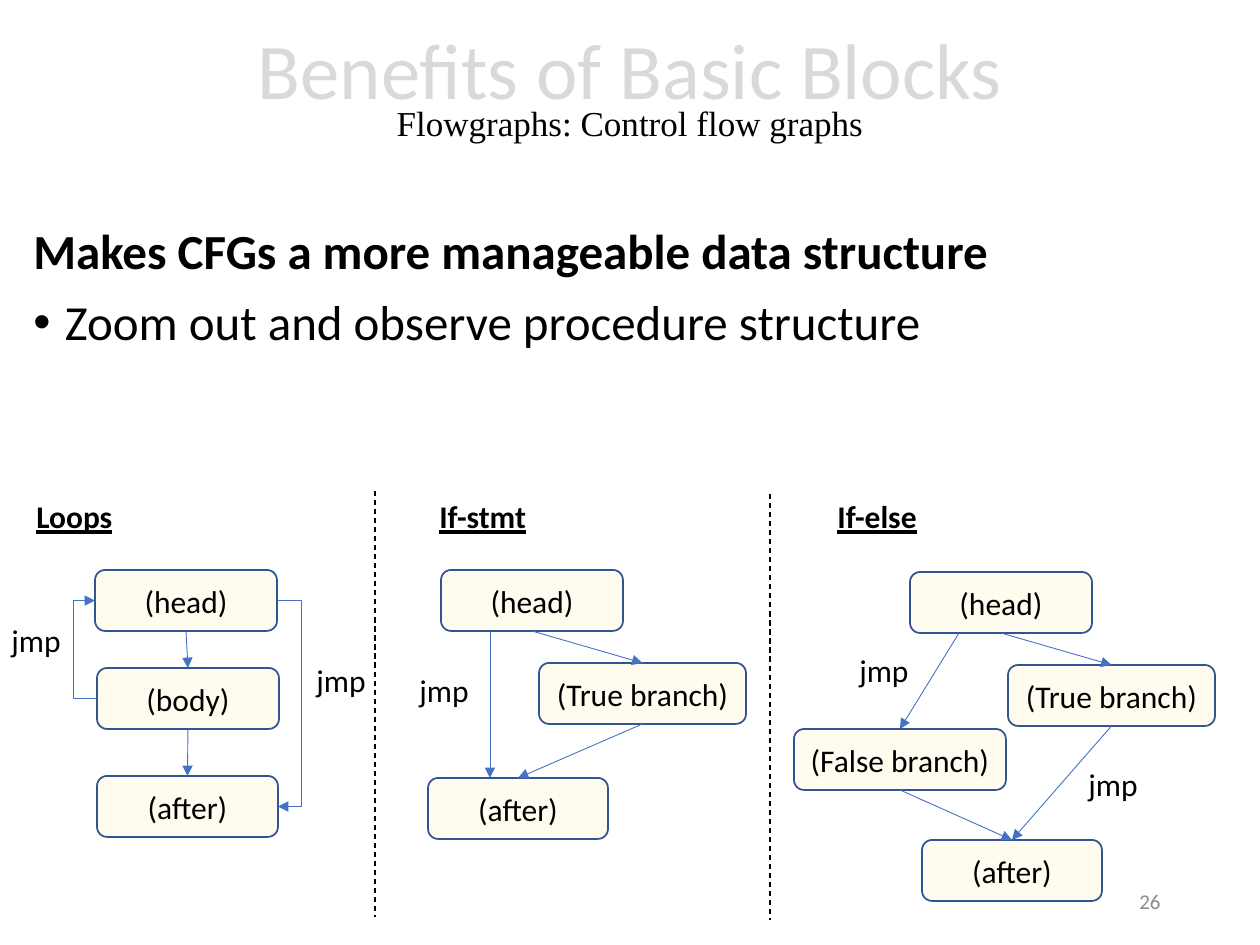
from lxml.etree import SubElement
from pptx import Presentation
from pptx.dml.color import RGBColor
from pptx.enum.dml import MSO_LINE
from pptx.enum.shapes import MSO_CONNECTOR as CONN, MSO_SHAPE as SHAPE
from pptx.enum.text import MSO_ANCHOR as ANCHOR, PP_ALIGN as ALIGN
from pptx.oxml.ns import qn
from pptx.util import Pt

SCALE = 914400 / 126  # EMU per px
BLUE, BORDER, CREAM = "4472C4", "325491", "FFF2CC"
TOP, LEFT, BOTTOM, RIGHT = range(4)  # connection sites of a box
BOX_H = 61


def px(n):
    return round(n * SCALE)


def color(hex_text):
    return RGBColor.from_string(hex_text)


def add_run(p, text, size=18, font="Calibri", fill="000000", bold=False, underline=False):
    r = p.add_run()
    r.text = text
    r.font.size, r.font.name = Pt(size), font
    r.font.bold, r.font.underline = bold, underline
    r.font.color.rgb = color(fill)


def add_text(s, x, y, w, h, text="", align=ALIGN.LEFT, anchor=ANCHOR.TOP, wrap=True, **fmt):
    tf = s.shapes.add_textbox(px(x), px(y), px(w), px(h)).text_frame
    tf.word_wrap, tf.vertical_anchor = wrap, anchor
    p = tf.paragraphs[0]
    p.alignment = align
    if text:
        add_run(p, text, **fmt)
    return tf


def add_heading(s, x, w, text):
    add_text(s, x, 491, w, 50, text, wrap=False, bold=True, underline=True)


def add_jump_label(s, x, y):
    add_text(s, x, y, 75, 50, "jmp", wrap=False)


def add_box(s, x, y, w, text):
    sp = s.shapes.add_shape(SHAPE.ROUNDED_RECTANGLE, px(x), px(y), px(w), px(BOX_H))
    sp.shadow.inherit = False
    sp.fill.solid()
    sp.fill.fore_color.rgb = color(CREAM)
    clr = sp.fill._xPr.find(".//" + qn("a:srgbClr"))
    SubElement(clr, qn("a:alpha"), val="30000")
    sp.line.color.rgb = color(BORDER)
    sp.line.width = Pt(1)
    tf = sp.text_frame
    tf.vertical_anchor = ANCHOR.MIDDLE
    p = tf.paragraphs[0]
    p.alignment = ALIGN.CENTER
    add_run(p, text)
    return sp


def add_line(s, x1, y1, x2, y2, kind=CONN.STRAIGHT, fill=BLUE, width=0.5, arrow=True):
    c = s.shapes.add_connector(kind, px(x1), px(y1), px(x2), px(y2))
    c.line.color.rgb = color(fill)
    c.line.width = Pt(width)
    if arrow:
        SubElement(c.line._get_or_add_ln(), qn("a:tailEnd"), type="triangle")
    SubElement(c._element.spPr, qn("a:effectLst"))
    return c


def add_divider(s, x, y):
    c = add_line(s, x, y, x, y + 426, fill="000000", width=0.75, arrow=False)
    c.line.dash_style = MSO_LINE.DASH


def join(s, start, end, sites=(BOTTOM, TOP), kind=CONN.STRAIGHT):
    c = add_line(s, 0, 0, 1, 1, kind)
    c.begin_connect(start, sites[0])
    c.end_connect(end, sites[1])
    return c


def join_around(s, start, end, side, reach):
    """Elbow arrow that leaves and enters on one side, reach px away from start."""
    c = join(s, start, end, (side, side), CONN.ELBOW)
    geom = c._element.spPr.find(qn("a:prstGeom"))
    guides = geom.find(qn("a:avLst"))
    ratio = round(px(reach) / c.width * 100000)
    SubElement(guides, qn("a:gd"), name="adj1", fmla=f"val {ratio}")
    xfrm = c._element.spPr.find(qn("a:xfrm"))
    if xfrm.get("flipH") and xfrm.get("flipV"):  # a half turn says the same
        del xfrm.attrib["flipH"], xfrm.attrib["flipV"]
        xfrm.set("rot", "10800000")


def add_title(s):
    tf = add_text(s, 0, 3, 1260, 183, align=ALIGN.CENTER, anchor=ANCHOR.MIDDLE)
    p = tf.paragraphs[0]
    p.line_spacing = 0.7
    add_run(p, "Benefits of Basic Blocks", size=45, fill="D9D9D9")
    p.add_line_break()
    add_run(p, "Flowgraphs: Control flow graphs", size=20, font="Times New Roman")


def add_body(s):
    tf = add_text(s, 21, 221, 1130, 624)
    lead, bullet = tf.paragraphs[0], tf.add_paragraph()
    for p in (lead, bullet):
        p.line_spacing, p.space_before = 0.9, Pt(10)
    add_run(lead, "Makes CFGs a more manageable data structure", size=28, bold=True)
    add_run(bullet, "Zoom out and observe procedure structure", size=28)
    pPr = bullet._p.get_or_add_pPr()
    pPr.set("marL", "228600")
    pPr.set("indent", "-228600")
    SubElement(pPr, qn("a:buFont"), typeface="Arial")
    SubElement(pPr, qn("a:buChar"), char="•")


def add_loop_graph(s):
    add_heading(s, 24, 102, "Loops")
    head = add_box(s, 95, 570, 182, "(head)")
    body = add_box(s, 97, 668, 182, "(body)")
    after = add_box(s, 97, 776, 181, "(after)")
    join(s, head, body)
    join(s, body, after)
    join_around(s, body, head, LEFT, 24)
    join_around(s, head, after, RIGHT, 25)
    add_jump_label(s, -1, 615)
    add_jump_label(s, 304, 655)


def add_if_graph(s):
    add_heading(s, 427, 113, "If-stmt")
    head = add_box(s, 441, 570, 182, "(head)")
    true = add_box(s, 539, 663, 207, "(True branch)")
    after = add_box(s, 428, 778, 180, "(after)")
    join(s, head, true)
    join(s, true, after)
    add_line(s, 490, 631, 490, 778)
    add_jump_label(s, 407, 665)


def add_if_else_graph(s):
    add_heading(s, 825, 106, "If-else")
    head = add_box(s, 910, 572, 182, "(head)")
    true = add_box(s, 1008, 665, 207, "(True branch)")
    false = add_box(s, 794, 729, 212, "(False branch)")
    after = add_box(s, 922, 840, 180, "(after)")
    join(s, head, true)
    join(s, true, after)
    join(s, false, after)
    add_line(s, 959, 633, 900, 729)
    add_jump_label(s, 847, 645)
    add_jump_label(s, 1076, 759)


def main():
    prs = Presentation()
    prs.slide_width, prs.slide_height = px(1260), px(945)
    s = prs.slides.add_slide(prs.slide_layouts[6])
    # Text
    add_title(s)
    add_text(s, 890, 876, 283, 50, "26", align=ALIGN.RIGHT, anchor=ANCHOR.MIDDLE,
             size=12, fill="8C8C8C")
    add_body(s)
    # Flow graphs
    add_loop_graph(s)
    add_if_graph(s)
    add_if_else_graph(s)
    # Column dividers
    add_divider(s, 375, 491)
    add_divider(s, 770, 494)
    prs.save("out.pptx")


if __name__ == "__main__":
    main()
